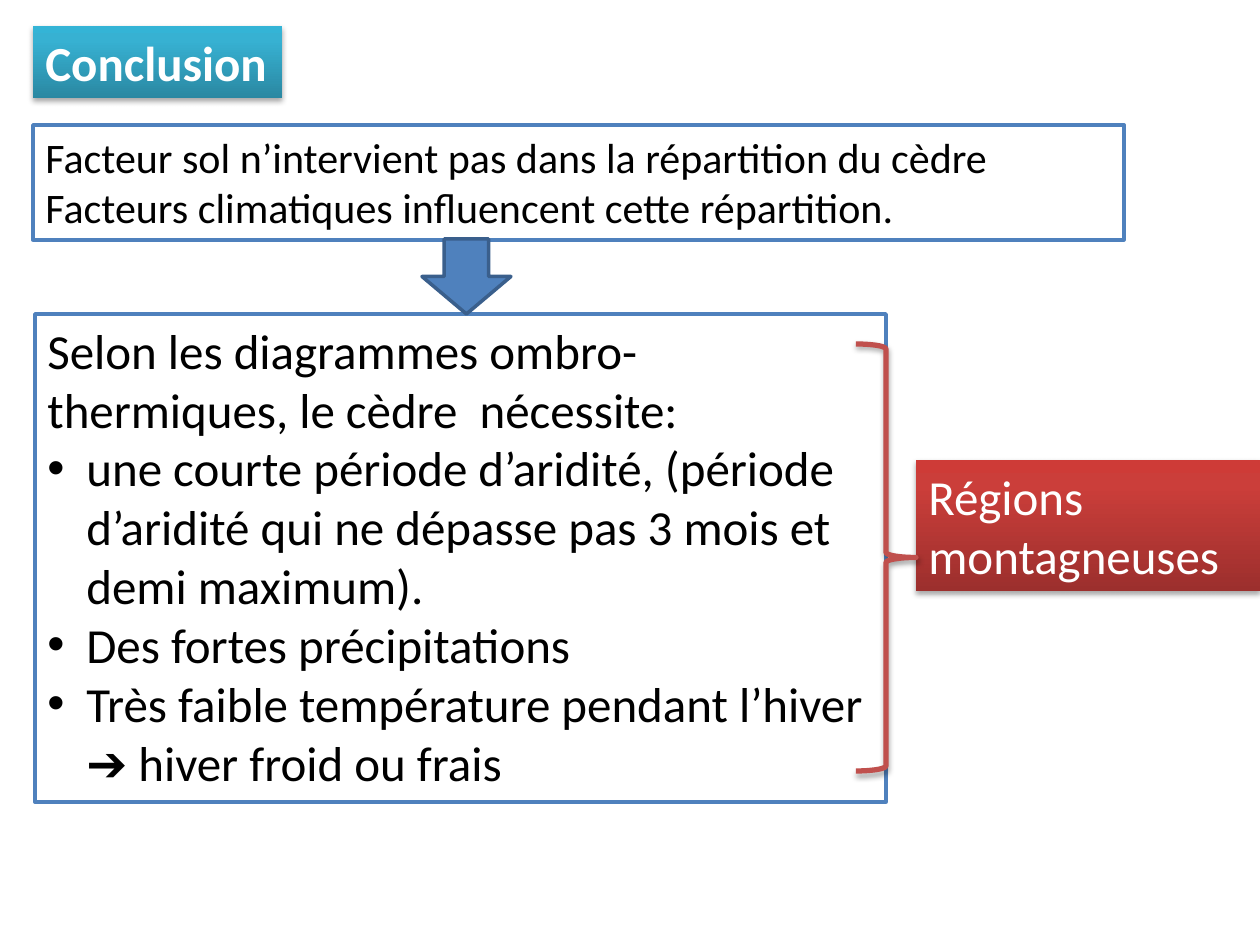
from copy import deepcopy

from lxml.etree import SubElement
from pptx import Presentation
from pptx.dml.color import RGBColor
from pptx.enum.shapes import MSO_SHAPE
from pptx.enum.text import MSO_ANCHOR, MSO_AUTO_SIZE, PP_ALIGN
from pptx.oxml.ns import qn
from pptx.util import Emu, Pt

PX = 914400 / 126  # EMU in one px
BLUE, RED, WHITE, BLACK = "4F81BD", "C0504D", "FFFFFF", "000000"
INDENT = 39


def color(hex_value):
    return RGBColor.from_string(hex_value)


def add_part(kind, box, fill=None, line=None, line_width=2, shadow=False):
    """Add a preset shape; a list of fill colours makes a bottom-to-top gradient."""
    shape = slide.shapes.add_shape(kind, *(Emu(round(v * PX)) for v in box))
    shape.shadow.inherit = False
    if isinstance(fill, list):
        shape.fill.gradient()
        shape.fill.gradient_angle = 90
        stop_list = shape._element.spPr.find(".//" + qn("a:gsLst"))
        stop_list.append(deepcopy(stop_list[-1]))
        for stop, position, shade in zip(shape.fill.gradient_stops, (0, 0.8, 1), fill):
            stop.position = position
            stop.color.rgb = color(shade)
    elif fill:
        shape.fill.solid()
        shape.fill.fore_color.rgb = color(fill)
    else:
        shape.fill.background()
    if line:
        shape.line.color.rgb = color(line)
        shape.line.width = Pt(line_width)
    else:
        shape.line.fill.background()
    if shadow:
        effects = shape._element.spPr.find(qn("a:effectLst"))
        outer = SubElement(effects, qn("a:outerShdw"), blurRad="40000", dist="23000",
                           dir="5400000", rotWithShape="0")
        shade = SubElement(outer, qn("a:srgbClr"), val=BLACK)
        SubElement(shade, qn("a:alpha"), val="35000")
    return shape


prs = Presentation()
prs.slide_width, prs.slide_height = Emu(round(1260 * PX)), Emu(round(945 * PX))
slide = prs.slides.add_slide(prs.slide_layouts[6])

# Boxes of text, from back to front
outlined = {"fill": WHITE, "line": BLUE}
boxes = [
    {"box": (33, 125, 1091, 115), "look": outlined, "size": 24,
     "align": PP_ALIGN.JUSTIFY,
     "lines": ["Facteur sol n’intervient pas dans la répartition du cèdre",
               "Facteurs climatiques influencent cette répartition."]},
    {"box": (35, 314, 851, 488), "look": outlined,
     "lines": ["Selon les diagrammes ombro-thermiques, le cèdre  nécessite:"],
     "bullets": ["une courte période d’aridité, (période d’aridité qui ne dépasse "
                 "pas 3 mois et demi maximum).",
                 "Des fortes précipitations",
                 "Très faible température pendant l’hiver ➔ hiver froid ou frais"]},
    {"box": (916, 460, 344, 131), "color": WHITE,
     "look": {"fill": ["9C2F2D", "CB3E3A", "CE3B37"], "shadow": True},
     "lines": ["Régions", "montagneuses"]},
    {"box": (33, 26, 249, 72), "color": WHITE, "bold": True, "wrap": False,
     "look": {"fill": ["2A88A2", "37B1D2", "34B4D6"], "shadow": True},
     "lines": ["Conclusion"]},
]
for part in boxes:
    frame = add_part(MSO_SHAPE.RECTANGLE, part["box"], **part["look"]).text_frame
    frame_format = {"word_wrap": part.get("wrap", True),
                    "auto_size": MSO_AUTO_SIZE.SHAPE_TO_FIT_TEXT,
                    "vertical_anchor": MSO_ANCHOR.TOP}
    for name, value in frame_format.items():
        setattr(frame, name, value)

    font_format = {"name": "Calibri", "size": Pt(part.get("size", 28)),
                   "bold": part.get("bold", False)}
    lines, bullets = part["lines"], part.get("bullets", [])
    for i, text in enumerate(lines + bullets):
        paragraph = frame.paragraphs[0] if i == 0 else frame.add_paragraph()
        paragraph.alignment = part.get("align", PP_ALIGN.LEFT)
        run = paragraph.add_run()
        run.text = text
        for name, value in font_format.items():
            setattr(run.font, name, value)
        run.font.color.rgb = color(part.get("color", BLACK))
        if i >= len(lines):
            properties = paragraph._p.get_or_add_pPr()
            properties.set("marL", str(round(INDENT * PX)))
            properties.set("indent", str(round(-INDENT * PX)))
            SubElement(properties, qn("a:buFont"), typeface="Arial")
            SubElement(properties, qn("a:buChar"), char="•")

# Arrow from the factors to the needs of the cedar
add_part(MSO_SHAPE.DOWN_ARROW, (422, 239, 89, 75), fill=BLUE, line="3A5F8C")

# Brace from the needs to the mountain regions
add_part(MSO_SHAPE.RIGHT_BRACE, (856, 344, 60, 427), line=RED, line_width=3, shadow=True)

prs.save("out.pptx")
